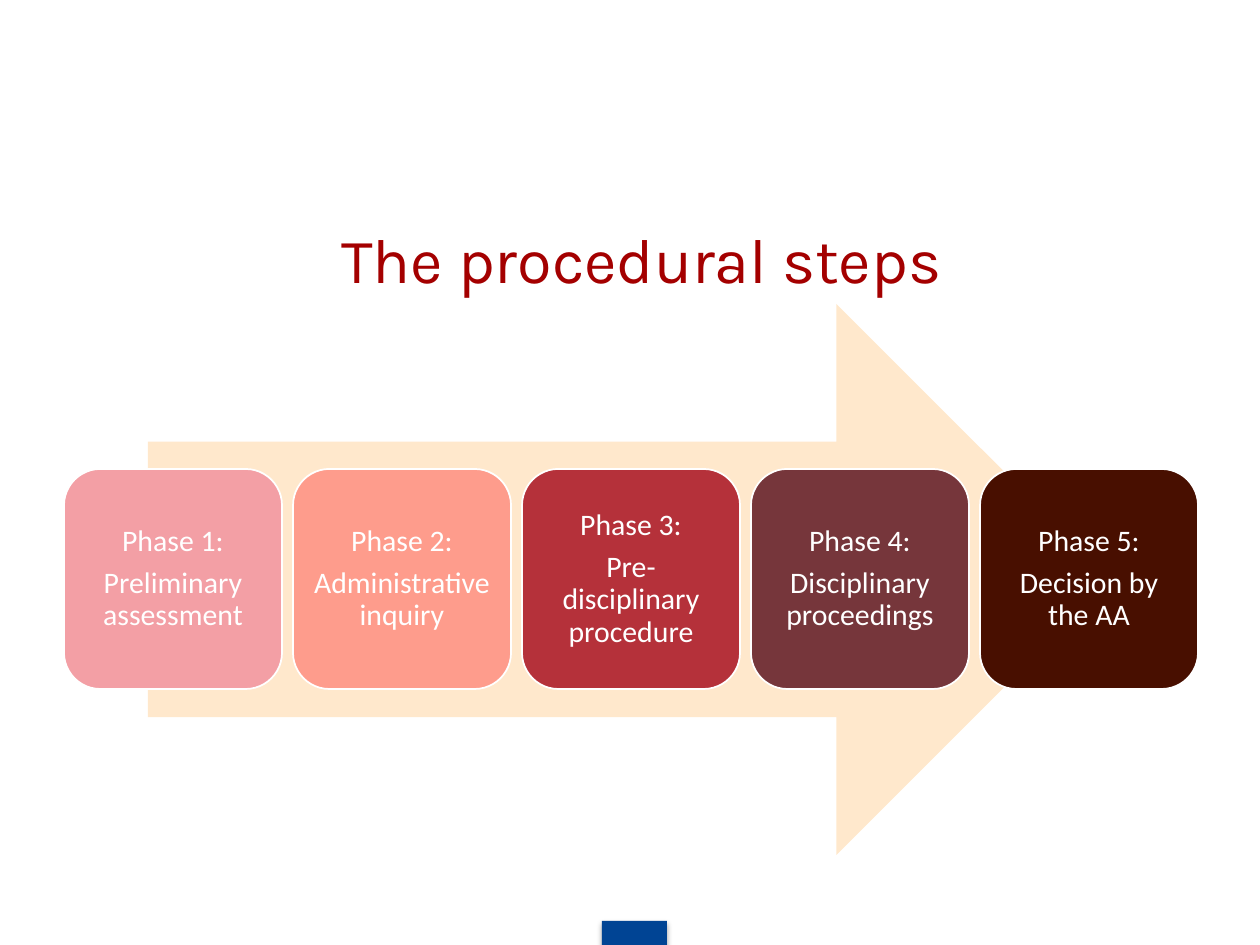
from lxml import etree
from pptx import Presentation
from pptx.dml.color import RGBColor
from pptx.enum.shapes import MSO_SHAPE as Shape
from pptx.enum.text import MSO_ANCHOR as Anchor, PP_ALIGN as Align
from pptx.oxml import parse_xml
from pptx.util import Emu, Pt

SCALE = 914400 / 126
WHITE = RGBColor(0xFF, 0xFF, 0xFF)
TITLE_RED = RGBColor(0xA4, 0x00, 0x00)
FOOTER_BLUE = RGBColor(0x00, 0x44, 0x94)
ARROW_CREAM = RGBColor(0xFF, 0xE8, 0xCC)
PINK = RGBColor(0xF3, 0x9F, 0xA5)
SALMON = RGBColor(0xFE, 0x9C, 0x8C)
CRIMSON = RGBColor(0xB5, 0x31, 0x3A)
PLUM = RGBColor(0x76, 0x36, 0x3B)
DARK_BROWN = RGBColor(0x48, 0x0F, 0x00)
FOOTER_SHADOW = (
    '<a:effectLst xmlns:a="http://schemas.openxmlformats.org/drawingml/2006/main">'
    '<a:outerShdw blurRad="39370" dist="22860" dir="5400000" rotWithShape="0">'
    '<a:srgbClr val="000000"><a:alpha val="35000"/></a:srgbClr>'
    '</a:outerShdw></a:effectLst>'
)
PHASES = [
    ("Phase 1:", "Preliminary assessment", PINK),
    ("Phase 2:", "Administrative inquiry", SALMON),
    ("Phase 3:", "Pre-disciplinary procedure", CRIMSON),
    ("Phase 4:", "Disciplinary proceedings", PLUM),
    ("Phase 5:", "Decision by the AA", DARK_BROWN),
]
PHASE_LEFT, PHASE_STEP = 64, 229


def px(length):
    return Emu(round(length * SCALE))


def add_filled(kind, left, top, width, height, color):
    """Add a preset shape with a plain fill, no line and no shadow."""
    shape = page.shapes.add_shape(kind, px(left), px(top), px(width), px(height))
    shape.shadow.inherit = False
    shape.fill.solid()
    shape.fill.fore_color.rgb = color
    shape.line.fill.background()
    return shape


deck = Presentation()
deck.slide_width, deck.slide_height = px(1260), px(945)
page = deck.slides.add_slide(deck.slide_layouts[6])

# Footer mark
footer = add_filled(Shape.RECTANGLE, 602, 921, 65, 28, FOOTER_BLUE)
properties = footer.fill._xPr
properties.replace(properties.find("{*}effectLst"), parse_xml(FOOTER_SHADOW))

# Title
title = page.shapes.add_textbox(px(97), px(214), px(1089), px(152))
title.text_frame.word_wrap = True
para = title.text_frame.paragraphs[0]
para.alignment = Align.CENTER
span = para.add_run()
span.text = "The procedural steps"
span.font.name = "Karla"
span.font.size = Pt(36)
span.font.color.rgb = TITLE_RED

# Phases along the arrow
add_filled(Shape.RIGHT_ARROW, 148, 304, 964, 551, ARROW_CREAM)
for index, (phase, step, color) in enumerate(PHASES):
    left = PHASE_LEFT + index * PHASE_STEP
    box = add_filled(Shape.ROUNDED_RECTANGLE, left, 469, 218, 220, color)
    box.line.color.rgb = WHITE
    box.line.width = Pt(1)
    frame = box.text_frame
    frame.word_wrap = True
    frame.vertical_anchor = Anchor.MIDDLE
    frame.margin_left = frame.margin_right = px(9)
    frame.margin_top = frame.margin_bottom = px(9)
    for number, text in enumerate((phase, step)):
        para = frame.add_paragraph() if number else frame.paragraphs[0]
        para.alignment = Align.CENTER
        para.line_spacing = 0.9
        para.space_after = Pt(6)
        span = para.add_run()
        span.text = text
        span.font.name = "Calibri"
        span.font.size = Pt(17)
        span.font.color.rgb = WHITE

deck.save("out.pptx")
